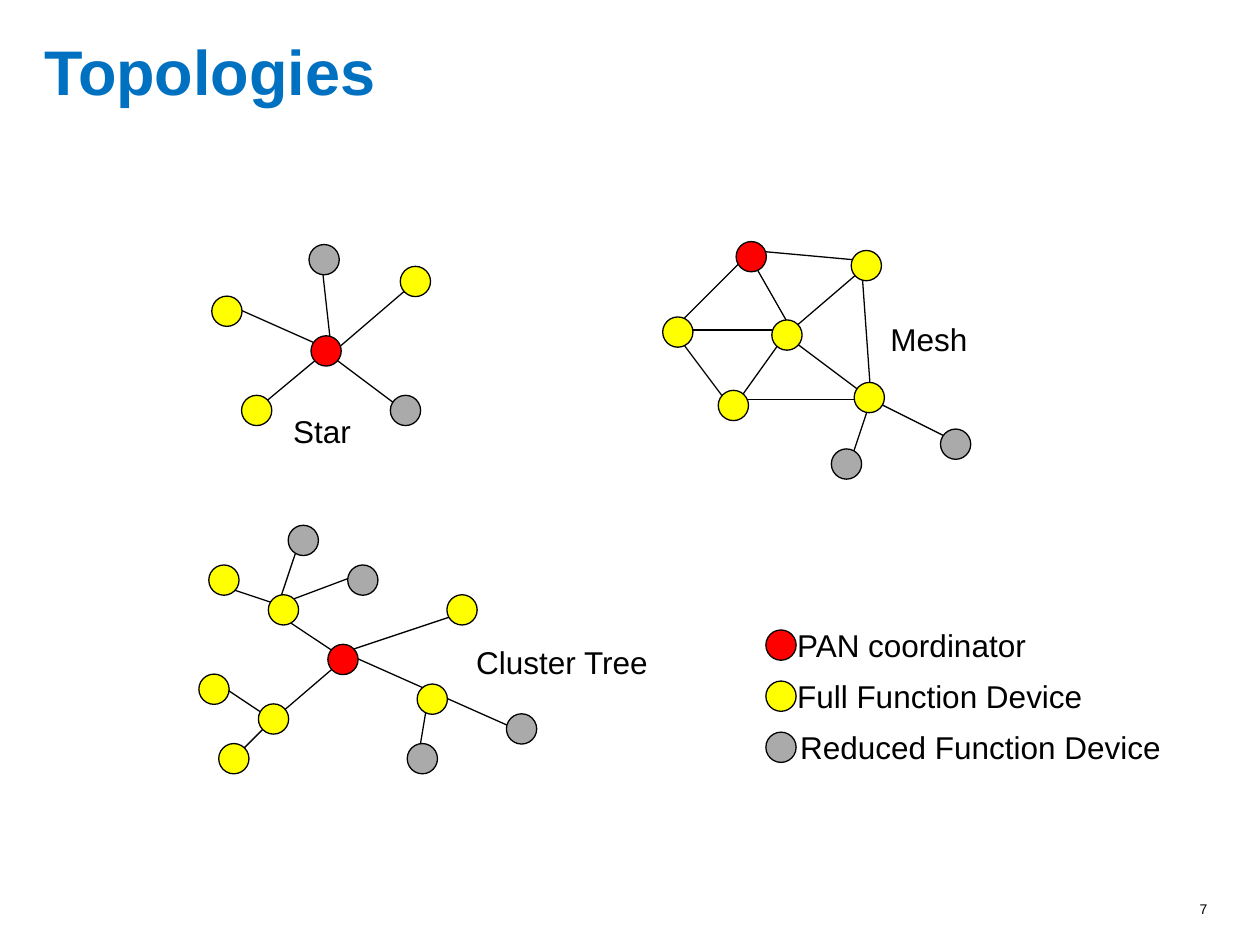
"""Build a slide that shows star, mesh and cluster tree network topologies."""
from pptx import Presentation
from pptx.dml.color import RGBColor as Rgb
from pptx.enum.shapes import MSO_CONNECTOR as Conn, MSO_SHAPE as Kind
from pptx.enum.text import MSO_ANCHOR as Anchor, PP_ALIGN as Align
from pptx.oxml.ns import qn
from pptx.util import Cm, Pt
from lxml.etree import SubElement

THEME = {
    "font": "Arial", "title": 36, "body": 18, "small": 8, "line": 0.75,
    "blue": "0070C0", "black": "000000",
    "pan": "FF0000", "full": "FFFF00", "reduced": "AAAAAA",
}
STEP = 0.2
DOT = 0.61

TITLE = ("Topologies", (0.64, 0.41, 23.5, 2.26))
PAGE = ("7", (18.67, 18.03, 5.92, 0.58))

NETS = [
    {
        "label": ("Star", (5.66, 8.18, 1.68, 1.02)),
        "origin": (4.27, 4.97),
        "links": [(12, 10, 11, 1), (13, 10, 20, 4), (2, 6, 11, 10),
                  (12, 11, 20, 17), (11, 11, 5, 16)],
        "nodes": {"pan": [(10, 9)],
                  "full": [(0, 5), (19, 2), (3, 15)],
                  "reduced": [(9.8, -0.2), (18, 15)]},
    },
    {
        "label": ("Mesh", (17.7, 6.32, 2.06, 1.02)),
        "origin": (13.36, 5.05),
        "links": [(21, 15, 19, 21), (21, 15, 29, 19), (7, 15, 21, 15),
                  (20, 1, 21, 15), (20, 1, 9, 0), (9, 0, 1, 8),
                  (1, 8, 7, 16), (13, 8, 9, 1), (13, 8, 20, 2),
                  (2, 8, 12, 8), (13, 9, 21, 15), (12, 9, 7, 16)],
        "nodes": {"reduced": [(17, 20), (28, 18)],
                  "full": [(11, 7), (19, 0), (19.3, 13.3), (5.6, 14.1), (0, 6.7)],
                  "pan": [(7.4, -0.9)]},
    },
    {
        "label": ("Cluster Tree", (9.35, 12.83, 4.01, 1.02)),
        "origin": (4.01, 10.59),
        "links": [(15, 13, 24, 17), (22, 24, 23, 18), (33, 21, 24, 17),
                  (2, 16, 8, 20), (3, 24, 7, 20), (7, 20, 14, 14),
                  (14, 13, 26, 9), (8, 9, 14, 13), (8, 8, 10, 2),
                  (8, 8, 16, 5), (2, 6, 8, 8)],
        "nodes": {"reduced": [(9, 0), (15, 4), (21, 22), (31, 19)],
                  "full": [(1, 4), (7, 7), (25, 7), (0, 15), (6, 18),
                           (2, 22), (22, 16)],
                  "pan": [(13, 12)]},
    },
]

KEYS = [("pan", "PAN coordinator", 15.82),
        ("full", "Full Function Device", 15.82),
        ("reduced", "Reduced Function Device", 15.88)]
KEY_LEFT, KEY_TOP, KEY_GAP = 15.44, 12.7, 1.03


def color(name):
    return Rgb.from_string(THEME[name])


def style(frame, size, tint="black", bold=False):
    for run in frame.paragraphs[0].runs:
        font = run.font
        font.name, font.size, font.bold = THEME["font"], Pt(THEME[size]), bold
        font.color.rgb = color(tint)


def write(shapes, text, box, size="body", wrap=False):
    frame = shapes.add_textbox(*map(Cm, box)).text_frame
    frame.word_wrap = wrap
    frame.text = text
    style(frame, size)
    return frame


def ink(line):
    line.color.rgb = color("black")
    line.width = Pt(THEME["line"])


def add_dot(shapes, left, top, role):
    dot = shapes.add_shape(Kind.OVAL, Cm(left), Cm(top), Cm(DOT), Cm(DOT))
    dot.shadow.inherit = False
    dot.fill.solid()
    dot.fill.fore_color.rgb = color(role)
    ink(dot.line)


def add_link(shapes, ends):
    link = shapes.add_connector(Conn.STRAIGHT, *map(Cm, ends))
    ink(link.line)
    SubElement(link._element.spPr, qn("a:effectLst"))


def add_net(slide, net):
    shapes = slide.shapes.add_group_shape().shapes
    left, top = net["origin"]

    def place(x, y):
        return left + x * STEP, top + y * STEP

    for x1, y1, x2, y2 in net["links"]:
        add_link(shapes, place(x1, y1) + place(x2, y2))
    for role, spots in net["nodes"].items():
        for spot in spots:
            add_dot(shapes, *place(*spot), role)
    write(shapes, *net["label"])


def add_legend(slide):
    shapes = slide.shapes.add_group_shape().shapes
    for row, (role, text, left) in enumerate(KEYS):
        top = KEY_TOP + row * KEY_GAP
        add_dot(shapes, KEY_LEFT, top, role)
        write(shapes, text, (left, top - 0.2, 8.13, 1.02), wrap=True)


def add_title(slide):
    text, box = TITLE
    title = slide.shapes.title
    title.left, title.top, title.width, title.height = map(Cm, box)
    frame = title.text_frame
    frame.text = text
    frame.vertical_anchor = Anchor.MIDDLE
    frame.paragraphs[0].alignment = Align.LEFT
    frame.paragraphs[0].line_spacing = 0.85
    style(frame, "title", "blue", True)


def main():
    deck = Presentation()
    deck.slide_width, deck.slide_height = Cm(25.4), Cm(19.05)
    slide = deck.slides.add_slide(deck.slide_layouts[5])
    add_title(slide)
    for net in NETS:
        add_net(slide, net)
    add_legend(slide)
    page = write(slide.shapes, *PAGE, size="small", wrap=True)
    page.paragraphs[0].alignment = Align.RIGHT
    deck.save("out.pptx")


if __name__ == "__main__":
    main()
